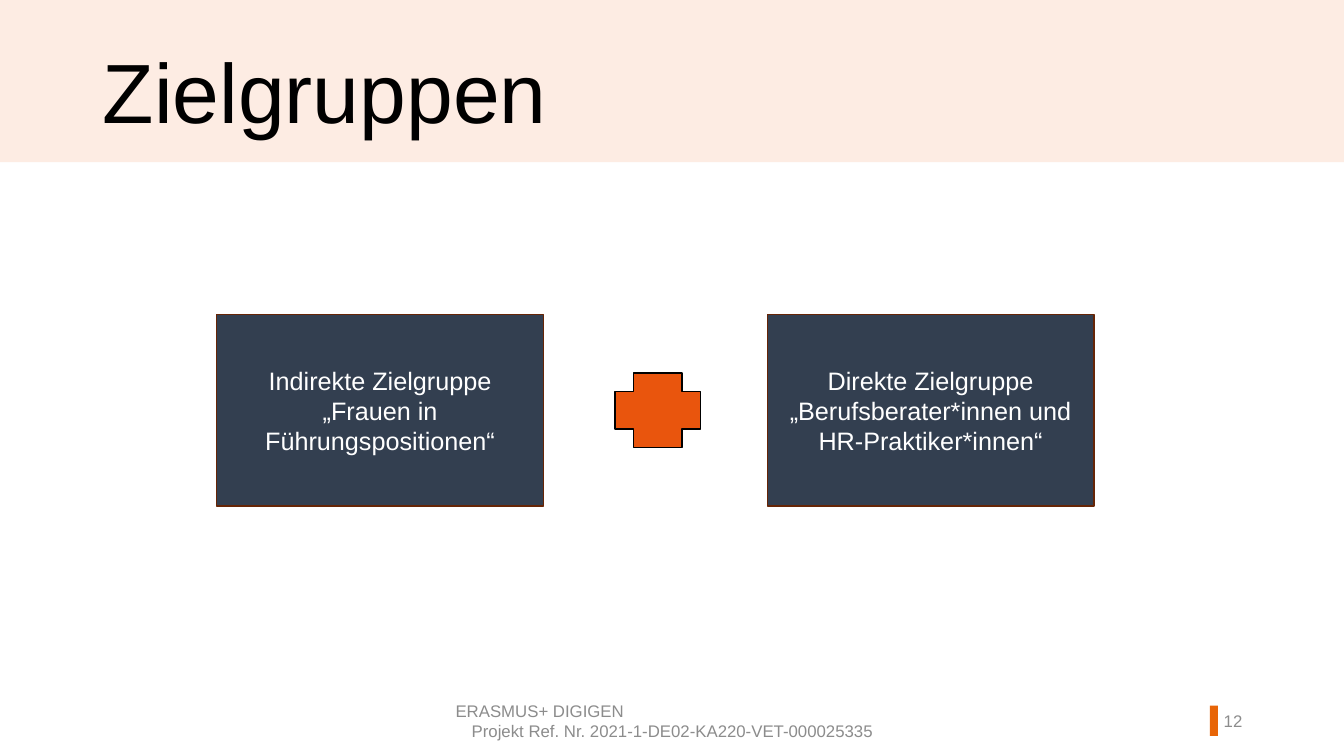
import pptx
import pptx.util
import pptx.dml.color
import pptx.enum.shapes
import pptx.enum.text

Inches, Pt = pptx.util.Inches, pptx.util.Pt
RGB = pptx.dml.color.RGBColor
SHAPE = pptx.enum.shapes.MSO_SHAPE
ALIGN = pptx.enum.text.PP_ALIGN
ANCHOR = pptx.enum.text.MSO_ANCHOR

# Content
TITLE = "Zielgruppen"
GROUPS = [
    ["Indirekte Zielgruppe", "„Frauen in Führungspositionen“"],
    ["Direkte Zielgruppe", "„Berufsberater*innen und HR-Praktiker*innen“"],
]
FOOTER = [
    ("ERASMUS+ DIGIGEN", ALIGN.LEFT),
    ("Projekt Ref. Nr. 2021-1-DE02-KA220-VET-000025335", ALIGN.CENTER),
]
PAGE = [("12", ALIGN.RIGHT)]

# Style
FONT = "Arial"
PEACH = RGB(0xFD, 0xEC, 0xE3)
ACCENT = RGB(0xE8, 0x65, 0x07)
ORANGE = RGB(0xE9, 0x55, 0x0D)
NAVY = RGB(0x33, 0x3F, 0x50)
BROWN = RGB(0x66, 0x25, 0x06)
GREY = RGB(0x8C, 0x8C, 0x8C)
BLACK = RGB(0, 0, 0)
WHITE = RGB(0xFF, 0xFF, 0xFF)

# Grid in inches
SLIDE_W, SLIDE_H = 13.33, 7.5
BOX_W, BOX_H = 3.24, 1.9
BOX_LEFT, BOX_TOP, BOX_STEP = 2.15, 3.12, 5.46
PLUS_W, PLUS_H, PLUS_LEFT = 0.85, 0.74, 6.1
FOOT_TOP, FOOT_H = 6.95, 0.4

prs = pptx.Presentation()
prs.slide_width, prs.slide_height = Inches(SLIDE_W), Inches(SLIDE_H)
s = prs.slides.add_slide(prs.slide_layouts[5])


def add_shape(kind, box, fill, line=None):
    sp = s.shapes.add_shape(kind, *map(Inches, box))
    sp.shadow.inherit = False
    sp.fill.solid()
    sp.fill.fore_color.rgb = fill
    if line is None:
        sp.line.fill.background()
    else:
        sp.line.color.rgb = line
        sp.line.width = Pt(1)
    return sp


def write(tf, lines, size, color, anchor=ANCHOR.MIDDLE):
    tf.word_wrap = True
    tf.vertical_anchor = anchor
    for i, (text, align) in enumerate(lines):
        p = tf.paragraphs[0] if i == 0 else tf.add_paragraph()
        p.alignment = align
        r = p.add_run()
        r.text = text
        r.font.name, r.font.size, r.font.color.rgb = FONT, Pt(size), color


# Header band and page marker
add_shape(SHAPE.RECTANGLE, (0, 0, SLIDE_W, 1.61), PEACH)
add_shape(SHAPE.RECTANGLE, (12, 7, 0.08, 0.3), ACCENT)

# Title, raised above the band
title = s.shapes.title
title.left, title.top, title.width, title.height = map(Inches, (0.92, 0.41, 9.93, 0.85))
title.element.getparent().append(title.element)
tf = title.text_frame
tf.auto_size = pptx.enum.text.MSO_AUTO_SIZE.NONE
write(tf, [(TITLE, ALIGN.LEFT)], 60, BLACK, ANCHOR.TOP)
tf.margin_top = Inches(0.1)
tf.paragraphs[0].line_spacing = 0.9

# Footer and page number
for left, width, lines in [(4.42, 4.5, FOOTER), (11.77, 0.65, PAGE)]:
    sp = s.shapes.add_textbox(*map(Inches, (left, FOOT_TOP, width, FOOT_H)))
    write(sp.text_frame, lines, 12, GREY)

# Target groups
for i, group in enumerate(GROUPS):
    box = (BOX_LEFT + i * BOX_STEP, BOX_TOP, BOX_W, BOX_H)
    sp = add_shape(SHAPE.RECTANGLE, box, NAVY, BROWN)
    write(sp.text_frame, [(text, ALIGN.CENTER) for text in group], 18, WHITE)

# Plus sign between the groups
plus_top = BOX_TOP + (BOX_H - PLUS_H) / 2
add_shape(SHAPE.CROSS, (PLUS_LEFT, plus_top, PLUS_W, PLUS_H), ORANGE, BLACK)

prs.save("out.pptx")
